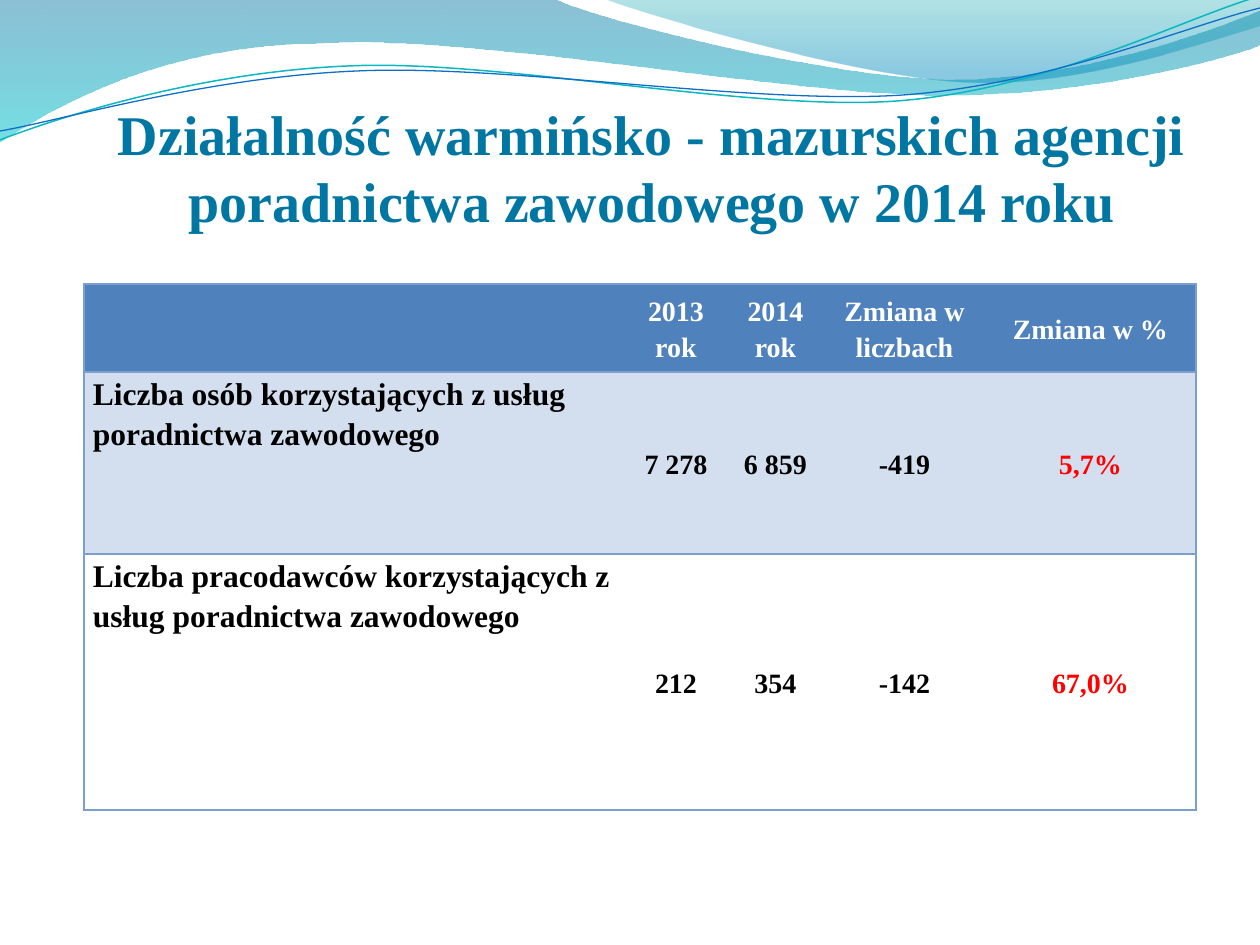
from dataclasses import dataclass
from math import cos, radians, sin

from lxml.etree import SubElement
from pptx import Presentation
from pptx.dml.color import RGBColor
from pptx.enum.text import MSO_ANCHOR, PP_ALIGN
from pptx.oxml.ns import qn
from pptx.util import Emu, Pt

TITLE = "Działalność warmińsko - mazurskich agencji poradnictwa zawodowego w 2014 roku"
ROWS = [
    ["", "2013 rok", "2014 rok", "Zmiana w liczbach", "Zmiana w %"],
    ["Liczba osób korzystających z usług poradnictwa zawodowego",
     "7 278", "6 859", "-419", "5,7%"],
    ["Liczba pracodawców korzystających z usług poradnictwa zawodowego",
     "212", "354", "-142", "67,0%"],
]
COL_WIDTHS = [541, 102, 97, 161, 211]
ROW_HEIGHTS = [88, 182, 256]

# A segment with one point is a straight line, one with three is a cubic curve.
BANDS = [
    dict(start=(0, -1),
         segments=[[(554, -1)],
                   [(600, 21), (837, 79), (955, 79)],
                   [(1075, 79), (1207, 33), (1260, 11)],
                   [(1261, 45)],
                   [(1239, 55), (1096, 96), (940, 95)],
                   [(784, 95), (481, 35), (324, 43)],
                   [(163, 44), (58, 105), (-1, 142)],
                   [(0, -1)]],
         stops=[(0, "0074A1", 45), (1, "00C6CF", 55)]),
    dict(start=(604, -1),
         segments=[[(641, 14), (859, 78), (969, 82)],
                   [(1079, 87), (1211, 40), (1260, 26)],
                   [(1260, 0)],
                   [(604, -1)]],
         stops=[(0, "00A1A9", 30), (0.8, "008BBF", 45)]),
]
WAVES = [
    dict(start=(0, 140),
         segments=[[(60, 117), (199, 72), (349, 66)],
                   [(498, 59), (747, 112), (898, 101)],
                   [(1050, 89), (1182, 19), (1257, -3)]],
         center=(629, 72), color="0AB8BF", width=0.85),
    dict(start=(0, 131),
         segments=[[(59, 121), (207, 77), (357, 71)],
                   [(508, 64), (752, 105), (903, 95)],
                   [(1053, 84), (1186, 26), (1260, 8)]],
         center=(629, 74), color="0F6FC6", width=0.75),
]
WAVE_TILT = -2.7
NO_STYLE = "{2D5ABB26-0587-4C30-8999-92F81FD0307C}"


@dataclass(frozen=True)
class Theme:
    font: str = "Times New Roman"
    title: str = "0076A3"
    header: str = "4F81BD"
    band: str = "D3DFEE"
    border: str = "7BA0CD"
    white: str = "FFFFFF"
    black: str = "000000"
    accent: str = "FF0000"
    title_size: int = 32
    label_size: int = 18
    cell_size: int = 16


THEME = Theme()


def px(n):
    return Emu(round(n * 914400 / 126))


def rgb(value):
    return RGBColor.from_string(value)


def set_text(tf, text, *, size, color, align=PP_ALIGN.LEFT, spacing=None):
    tf.word_wrap = True
    p = tf.paragraphs[0]
    p.alignment = align
    p.line_spacing = spacing
    r = p.add_run()
    r.text = text
    r.font.name = THEME.font
    r.font.size = Pt(size)
    r.font.bold = True
    r.font.color.rgb = rgb(color)


def turn(point, center, degrees):
    a = radians(degrees)
    dx, dy = point[0] - center[0], point[1] - center[1]
    return center[0] + dx * cos(a) - dy * sin(a), center[1] + dx * sin(a) + dy * cos(a)


def add_path(slide, start, segments, close):
    """Build the outline from straight steps, then merge each triple into a curve."""
    points = [(px(x), px(y)) for segment in segments for x, y in segment]
    builder = slide.shapes.build_freeform(px(start[0]), px(start[1]), scale=1.0)
    builder.add_line_segments(points, close=close)
    sp = builder.convert_to_shape()
    sp.shadow.inherit = False

    outline = next(sp._element.iter(qn("a:path")))
    steps = iter(outline.findall(qn("a:lnTo")))
    for segment in segments:
        first, *others = [next(steps) for _ in segment]
        if others:
            curve = SubElement(outline, qn("a:cubicBezTo"))
            outline.replace(first, curve)
            for step in (first, *others):
                curve.append(step[0])
            for step in others:
                outline.remove(step)
    return sp


def add_band(slide, start, segments, stops):
    sp = add_path(slide, start, segments, True)
    sp.line.fill.background()
    sp.fill.gradient()
    sp.fill.gradient_angle = 270
    for stop, (position, color, _) in zip(sp.fill.gradient_stops, stops):
        stop.position = position
        stop.color.rgb = rgb(color)
    colors = sp._element.spPr.iter(qn("a:srgbClr"))
    for node, (_, _, opacity) in zip(colors, stops):
        SubElement(node, qn("a:alpha"), val=str(opacity * 1000))


def add_wave(slide, start, segments, center, color, width):
    """Lay the curve level, then tilt the shape itself."""
    level = [[turn(p, center, -WAVE_TILT) for p in segment] for segment in segments]
    sp = add_path(slide, turn(start, center, -WAVE_TILT), level, False)
    sp.rotation = WAVE_TILT
    sp.fill.background()
    sp.line.color.rgb = rgb(color)
    sp.line.width = Pt(width)


def add_title(slide):
    tf = slide.shapes.add_textbox(px(85), px(65), px(1134), px(169)).text_frame
    tf.margin_left = tf.margin_right = tf.margin_bottom = 0
    tf.margin_top = px(6)
    tf.vertical_anchor = MSO_ANCHOR.BOTTOM
    set_text(tf, TITLE, size=THEME.title_size, color=THEME.title, align=PP_ALIGN.CENTER)


def set_borders(cell, sides):
    tcPr = cell._tc.get_or_add_tcPr()
    for side in sides:
        ln = SubElement(tcPr, qn(f"a:ln{side}"), w=str(Pt(1)))
        fill = SubElement(ln, qn("a:solidFill"))
        SubElement(fill, qn("a:srgbClr"), val=THEME.border)


def add_data_table(slide):
    frame = slide.shapes.add_table(len(ROWS), len(COL_WIDTHS), px(84), px(284),
                                   px(sum(COL_WIDTHS)), px(sum(ROW_HEIGHTS)))
    table = frame.table
    table.horz_banding = False
    table._tbl.tblPr.find(qn("a:tableStyleId")).text = NO_STYLE
    for column, width in zip(table.columns, COL_WIDTHS):
        column.width = px(width)
    for row, height in zip(table.rows, ROW_HEIGHTS):
        row.height = px(height)

    last = len(COL_WIDTHS) - 1
    fills = [THEME.header, THEME.band, None]
    for i, (values, fill) in enumerate(zip(ROWS, fills)):
        for j, value in enumerate(values):
            cell = table.cell(i, j)
            set_borders(cell, {0: "LTB", last: "RTB"}.get(j, "TB"))
            if fill:
                cell.fill.solid()
                cell.fill.fore_color.rgb = rgb(fill)
            else:
                cell.fill.background()
            cell.margin_left = cell.margin_right = px(9)
            cell.margin_top = cell.margin_bottom = 0
            label = j == 0
            cell.vertical_anchor = MSO_ANCHOR.TOP if label else MSO_ANCHOR.MIDDLE
            color = THEME.white if i == 0 else THEME.accent if j == last else THEME.black
            if value:
                set_text(cell.text_frame, value, color=color, spacing=1.15,
                         size=THEME.label_size if label else THEME.cell_size,
                         align=PP_ALIGN.LEFT if label else PP_ALIGN.CENTER)


def main():
    prs = Presentation()
    prs.slide_width, prs.slide_height = px(1260), px(945)
    slide = prs.slides.add_slide(prs.slide_layouts[6])
    for band in BANDS:
        add_band(slide, **band)
    for wave in WAVES:
        add_wave(slide, **wave)
    add_title(slide)
    add_data_table(slide)
    prs.save("out.pptx")


if __name__ == "__main__":
    main()
